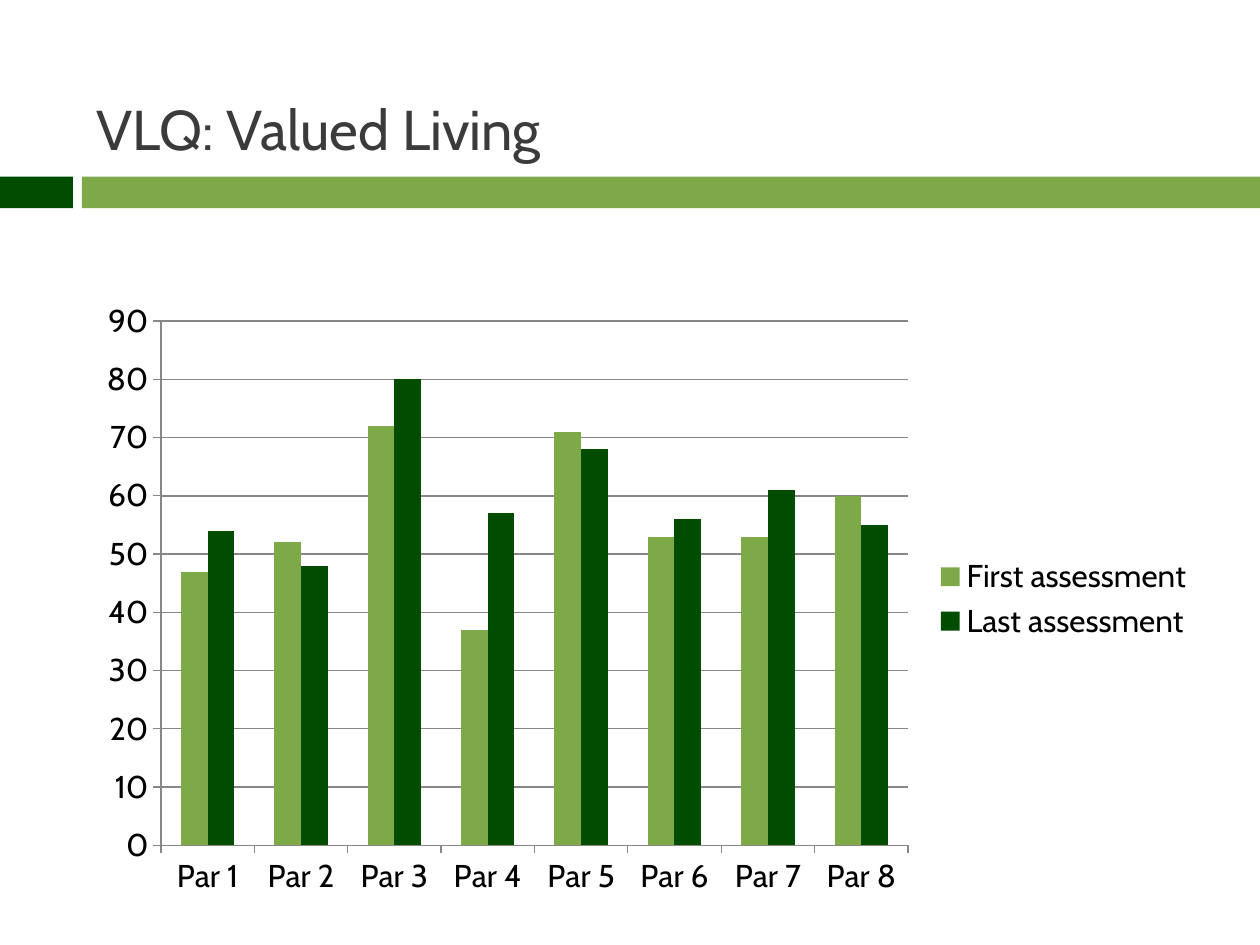
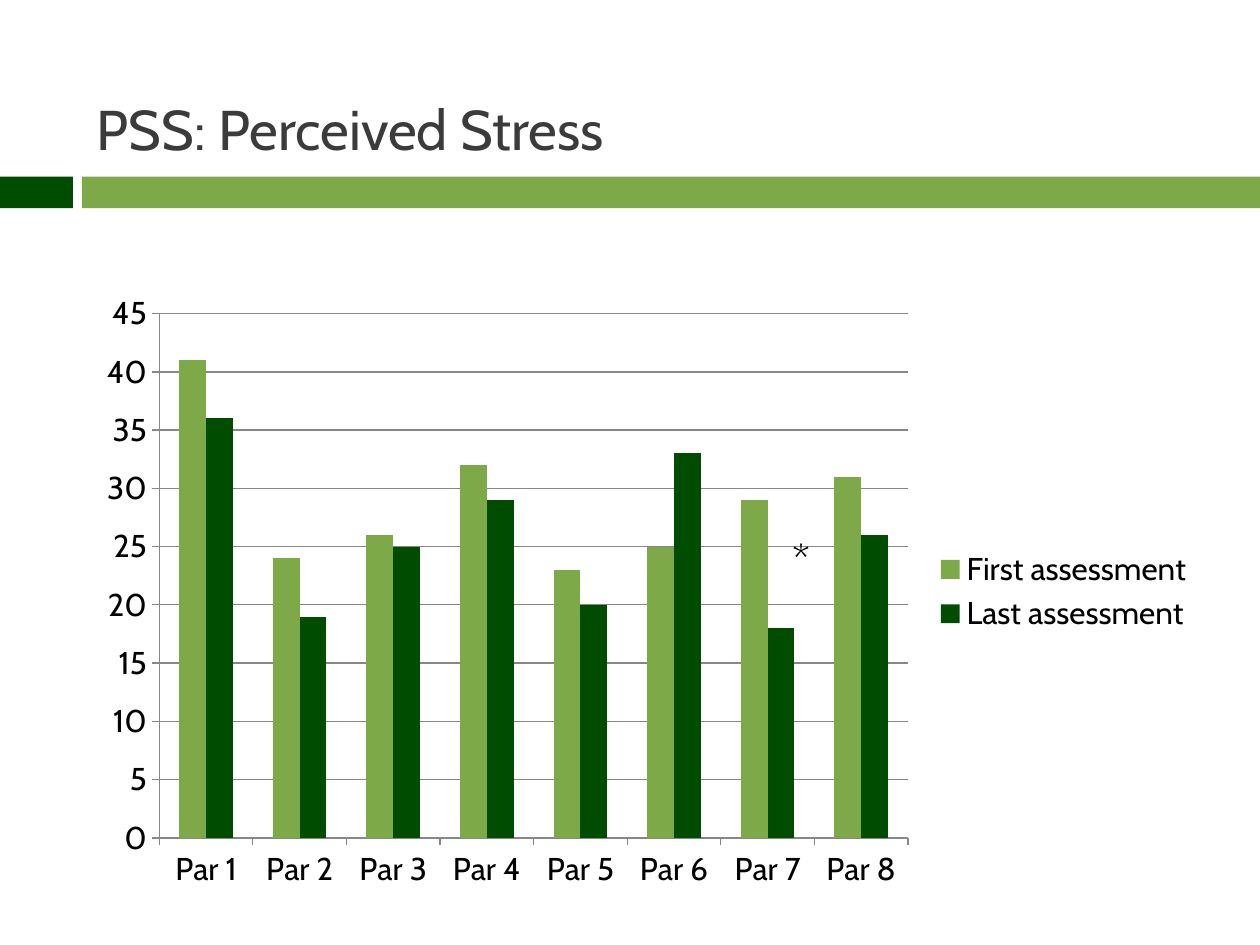
from pptx import Presentation
from pptx.chart.data import CategoryChartData
from pptx.dml.color import RGBColor
from pptx.enum.chart import XL_CHART_TYPE, XL_LEGEND_POSITION, XL_TICK_MARK
from pptx.enum.shapes import MSO_SHAPE
from pptx.enum.text import MSO_ANCHOR
from pptx.util import Cm, Pt

CLUSTERED = XL_CHART_TYPE.COLUMN_CLUSTERED
LEGEND_RIGHT = XL_LEGEND_POSITION.RIGHT
TICK_OUTSIDE = XL_TICK_MARK.OUTSIDE
TICK_NONE = XL_TICK_MARK.NONE
RECTANGLE = MSO_SHAPE.RECTANGLE
TOP, BOTTOM = MSO_ANCHOR.TOP, MSO_ANCHOR.BOTTOM

SLIDE_WIDTH, SLIDE_HEIGHT = 25.4, 19.05
MARGIN = 1.7
PARTICIPANTS = [f"Par {number}" for number in range(1, 9)]
ASSESSMENTS = ("First assessment", "Last assessment")


def rgb(hex_colour):
    return RGBColor.from_string(hex_colour)


class Deck:
    """Holds the shared style and the slide being built; lengths are in cm."""

    FONT = "Cabin"
    DARK_GREEN = "004C00"
    LIGHT_GREEN = "7EA949"
    TITLE_GREY = "3B3B3B"
    BLACK = "000000"
    AXIS_GREY = "878787"

    def __init__(self):
        self.presentation = Presentation()
        self.presentation.slide_width = Cm(SLIDE_WIDTH)
        self.presentation.slide_height = Cm(SLIDE_HEIGHT)
        self.slide = None

    def new_slide(self, title):
        """Start a slide with the two-part band and its title."""
        blank = self.presentation.slide_layouts[6]
        self.slide = self.presentation.slides.add_slide(blank)
        self.band(0, 1.47, self.DARK_GREEN)
        self.band(1.65, SLIDE_WIDTH - 1.65, self.LIGHT_GREEN)
        self.text(title, (MARGIN, 0.64, 22.66, 2.74), 32, self.TITLE_GREY, BOTTOM)

    def band(self, left, width, colour):
        band = self.slide.shapes.add_shape(
            RECTANGLE, Cm(left), Cm(3.56), Cm(width), Cm(0.64))
        band.shadow.inherit = False
        band.fill.solid()
        band.fill.fore_color.rgb = rgb(colour)
        band.line.fill.background()

    def text(self, wording, box, size, colour, anchor=TOP):
        frame = self.slide.shapes.add_textbox(*map(Cm, box)).text_frame
        frame.word_wrap = True
        frame.vertical_anchor = anchor
        paragraph = frame.paragraphs[0]
        paragraph.text = wording
        self.style_font(paragraph.font, size, colour)

    def style_font(self, font, size, colour):
        font.name = self.FONT
        font.size = Pt(size)
        font.color.rgb = rgb(colour)

    def style_line(self, line):
        line.color.rgb = rgb(self.AXIS_GREY)
        line.width = Pt(0.75)

    def assessment_chart(self, top, scores, highest, step):
        """Compare the first and last scores of every participant."""
        data = CategoryChartData()
        data.categories = PARTICIPANTS
        for assessment, values in zip(ASSESSMENTS, scores):
            data.add_series(assessment, values)
        chart = self.slide.shapes.add_chart(
            CLUSTERED, Cm(MARGIN), Cm(top), Cm(22.63), Cm(12.47), data).chart
        self.style_font(chart.font, 18, self.BLACK)
        chart.has_title = False
        chart.has_legend = True
        chart.legend.position = LEGEND_RIGHT
        chart.legend.include_in_layout = False

        for axis in (chart.category_axis, chart.value_axis):
            axis.major_tick_mark = TICK_OUTSIDE
            axis.minor_tick_mark = TICK_NONE
            self.style_line(axis.format.line)
        score_axis = chart.value_axis
        score_axis.minimum_scale = 0
        score_axis.maximum_scale = highest
        score_axis.major_unit = step
        score_axis.has_major_gridlines = True
        self.style_line(score_axis.major_gridlines.format.line)

        plot = chart.plots[0]
        plot.gap_width = 150
        plot.overlap = 0
        plot.vary_by_categories = False
        for series, colour in zip(plot.series, (self.LIGHT_GREEN, self.DARK_GREEN)):
            series.format.fill.solid()
            series.format.fill.fore_color.rgb = rgb(colour)
            series.invert_if_negative = False


def main():
    deck = Deck()

    deck.new_slide("VLQ: Valued Living")
    valued_living = ((47, 52, 72, 37, 71, 53, 53, 60),
                     (54, 48, 80, 57, 68, 56, 61, 55))
    deck.assessment_chart(5.84, valued_living, highest=90, step=10)

    deck.new_slide("PSS: Perceived Stress")
    perceived_stress = ((41, 24, 26, 32, 23, 25, 29, 31),
                        (36, 19, 25, 29, 20, 33, 18, 26))
    deck.assessment_chart(5.69, perceived_stress, highest=45, step=5)
    deck.text("*", (15.72, 10.64, 0.79, 1.27), 24, deck.BLACK)

    deck.presentation.save("out.pptx")


if __name__ == "__main__":
    main()
